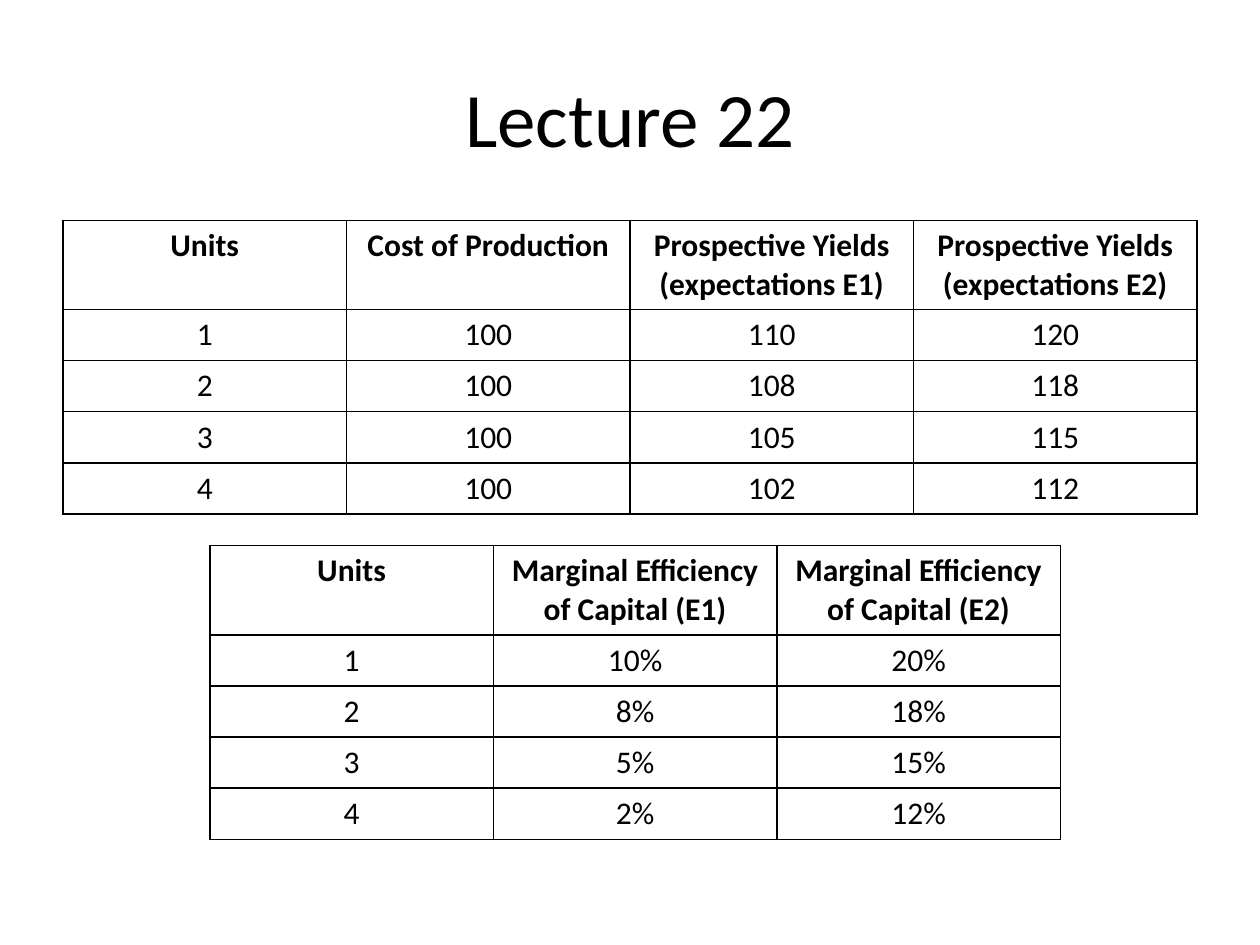
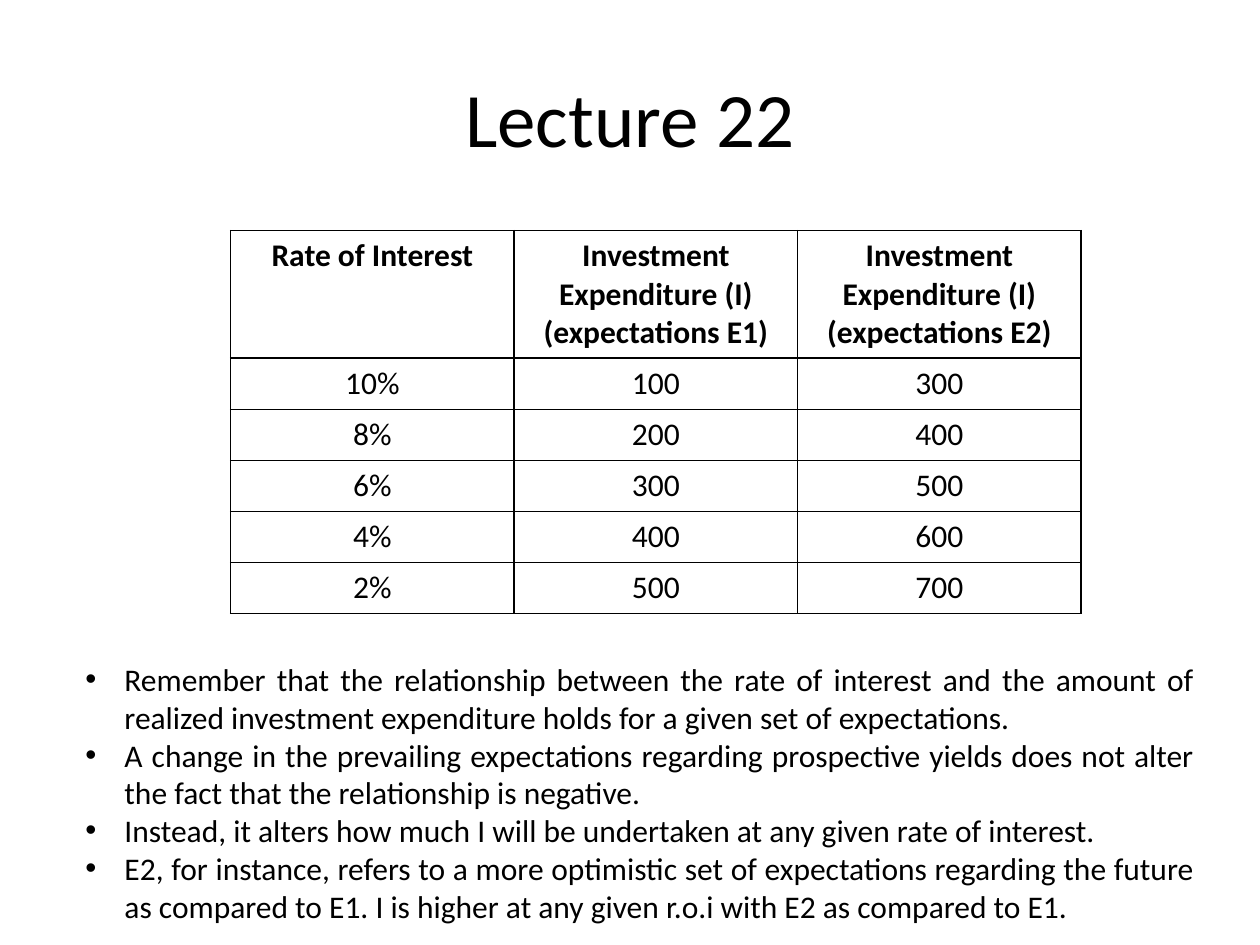
"""Build two lecture slides on expectations, capital yields and investment."""
from dataclasses import dataclass
from lxml.etree import SubElement as Sub
from pptx import Presentation
from pptx.dml.color import RGBColor as Rgb
from pptx.enum.text import MSO_ANCHOR as Anchor, MSO_AUTO_SIZE as Fit, PP_ALIGN as Align
from pptx.oxml.ns import qn
from pptx.util import Cm, Pt


@dataclass(frozen=True)
class Theme:
    ink: str = "000000"
    face: str = "Calibri"
    head: int = 44
    body: int = 18
    rule: int = 1


TITLE = "Lecture 22"
YIELDS = [
    ("Units", "Cost of Production", "Prospective Yields (expectations E1)",
     "Prospective Yields (expectations E2)"),
    ("1", "100", "110", "120"),
    ("2", "100", "108", "118"),
    ("3", "100", "105", "115"),
    ("4", "100", "102", "112"),
]
MARGIN = [
    ("Units", "Marginal Efficiency of Capital (E1)", "Marginal Efficiency of Capital (E2)"),
    ("1", "10%", "20%"),
    ("2", "8%", "18%"),
    ("3", "5%", "15%"),
    ("4", "2%", "12%"),
]
SPEND = [
    ("Rate of Interest", "Investment Expenditure (I) (expectations E1)",
     "Investment Expenditure (I) (expectations E2)"),
    ("10%", "100", "300"),
    ("8%", "200", "400"),
    ("6%", "300", "500"),
    ("4%", "400", "600"),
    ("2%", "500", "700"),
]
NOTES = [
    "Remember that the relationship between the rate of interest and the amount of "
    "realized investment expenditure holds for a given set of expectations.",
    "A change in the prevailing expectations regarding prospective yields does not alter "
    "the fact that the relationship is negative.",
    "Instead, it alters how much I will be undertaken at any given rate of interest.",
    "E2, for instance, refers to a more optimistic set of expectations regarding the future "
    "as compared to E1. I is higher at any given r.o.i with E2 as compared to E1.",
]
SLIDES = [
    {"grids": [(YIELDS, 1.27, 4.44, 2), (MARGIN, 4.23, 11, 2)], "notes": []},
    {"grids": [(SPEND, 4.65, 4.65, 3)], "notes": NOTES},
]

LOOK = Theme()
COL, ROW, LINE = 5.715, 1.03, 0.77
TITLE_AT = (1.27, 0.76, 22.86, 3.18)
NOTES_AT = (1.47, 13.18, 22.86, 5.64)
HANG = Cm(0.79)


def apply(part, form):
    for name, value in form.items():
        setattr(part, name, value)


def write(para, text, size, align, bold=False):
    para.alignment = align
    run = para.add_run()
    run.text = text
    apply(run.font, {"name": LOOK.face, "size": Pt(size), "bold": bold})
    run.font.color.rgb = Rgb.from_string(LOOK.ink)


def add_box(slide, place, form):
    frame = slide.shapes.add_textbox(*map(Cm, place)).text_frame
    apply(frame, {"word_wrap": True, **form})
    return frame


def add_title(slide):
    frame = add_box(slide, TITLE_AT, {"vertical_anchor": Anchor.MIDDLE})
    write(frame.paragraphs[0], TITLE, LOOK.head, Align.CENTER)


def add_notes(slide, notes):
    frame = add_box(slide, NOTES_AT, {"auto_size": Fit.SHAPE_TO_FIT_TEXT})
    for num, note in enumerate(notes):
        para = frame.add_paragraph() if num else frame.paragraphs[0]
        props = para._p.get_or_add_pPr()
        props.set("marL", str(HANG))
        props.set("indent", str(-HANG))
        Sub(props, qn("a:buFont"), typeface="Arial")
        Sub(props, qn("a:buChar"), char="•")
        write(para, note, LOOK.body, Align.JUSTIFY)


def frame_cell(cell):
    props = cell._tc.get_or_add_tcPr()
    for side in "LRTB":
        edge = Sub(props, qn(f"a:ln{side}"), w=str(Pt(LOOK.rule)))
        Sub(Sub(edge, qn("a:solidFill")), qn("a:srgbClr"), val=LOOK.ink)
    cell.fill.background()


def add_grid(slide, rows, left, top, lines):
    tall = [ROW + LINE * (lines - 1)] + [ROW] * (len(rows) - 1)
    wide = len(rows[0]) * COL
    table = slide.shapes.add_table(
        len(rows), len(rows[0]), Cm(left), Cm(top), Cm(wide), Cm(sum(tall))).table
    apply(table, {"first_row": False, "horz_banding": False})
    for col in table.columns:
        col.width = Cm(COL)
    for r, texts in enumerate(rows):
        table.rows[r].height = Cm(tall[r])
        for c, text in enumerate(texts):
            cell = table.cell(r, c)
            frame_cell(cell)
            write(cell.text_frame.paragraphs[0], text, LOOK.body, Align.CENTER, r == 0)


def main():
    deck = Presentation()
    apply(deck, {"slide_width": Cm(25.4), "slide_height": Cm(19.05)})
    for page in SLIDES:
        slide = deck.slides.add_slide(deck.slide_layouts[6])
        add_title(slide)
        for grid in page["grids"]:
            add_grid(slide, *grid)
        if page["notes"]:
            add_notes(slide, page["notes"])
    deck.save("out.pptx")


if __name__ == "__main__":
    main()
